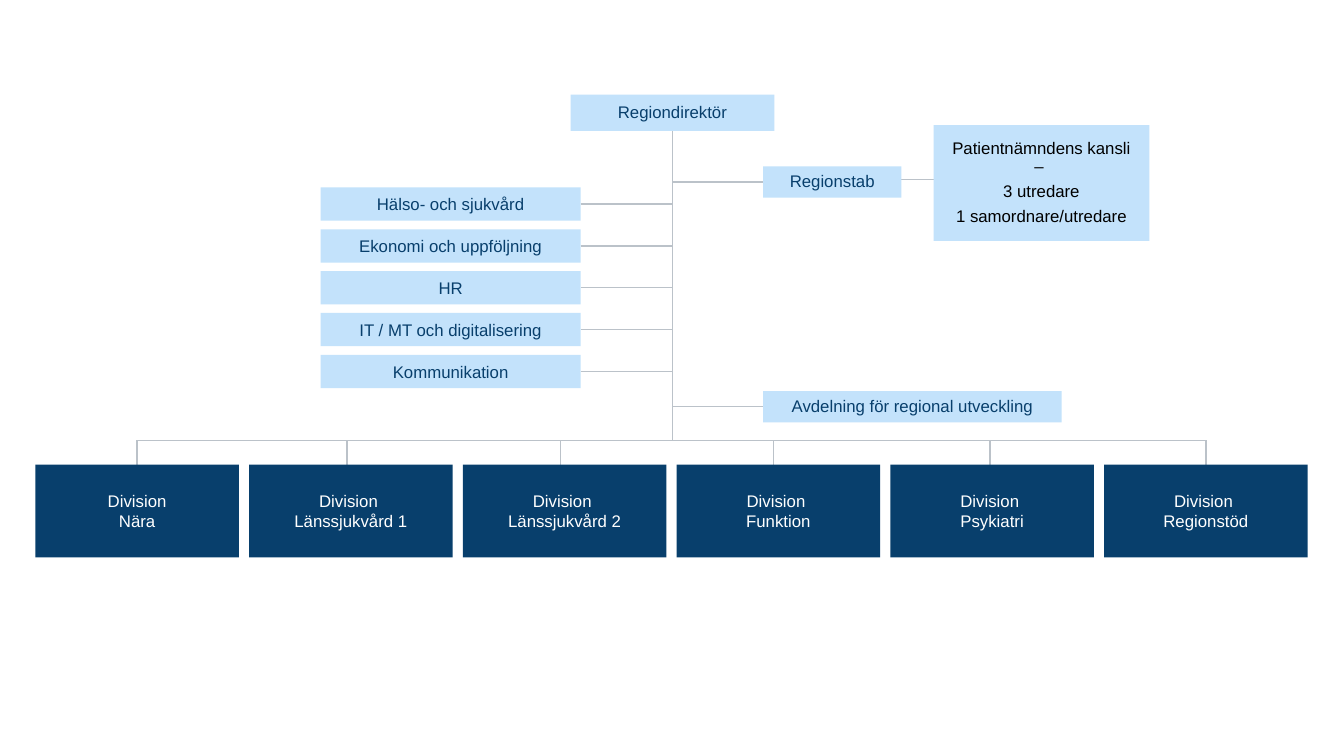
from pptx import Presentation, util as u
from pptx.dml.color import RGBColor
from pptx.enum import shapes, text
from pptx.oxml.ns import qn
from lxml import etree

NAVY = RGBColor(0x08, 0x3F, 0x6C)
SKY = RGBColor(0xC3, 0xE2, 0xFB)
GREY = RGBColor(0xBB, 0xC2, 0xC9)
WHITE = RGBColor(0xFF, 0xFF, 0xFF)
BLACK = RGBColor(0, 0, 0)

deck = Presentation()
deck.slide_width, deck.slide_height = u.Inches(13.33), u.Inches(7.5)
page = deck.slides.add_slide(deck.slide_layouts[6])


def add_box(wording, left, top, width, height, fill=SKY, color=NAVY,
            inset=0.15, line_spacing=None, space_after=None):
    box = page.shapes.add_shape(shapes.MSO_SHAPE.RECTANGLE,
                                *map(u.Inches, (left, top, width, height)))
    box.shadow.inherit = False
    box.fill.solid()
    box.fill.fore_color.rgb = fill
    box.line.fill.background()
    frame = box.text_frame
    frame.word_wrap = True
    frame.vertical_anchor = text.MSO_ANCHOR.MIDDLE
    frame.margin_left = frame.margin_right = u.Inches(inset)
    frame.margin_top = frame.margin_bottom = u.Inches(min(inset, height / 2))
    frame.text = wording
    for para in frame.paragraphs:
        para.alignment = text.PP_ALIGN.CENTER
        para.line_spacing = line_spacing
        para.space_after = space_after
        for span in para.runs:
            span.font.name = "Arial"
            span.font.size = u.Pt(12)
            span.font.color.rgb = color


def add_line(x1, y1, x2, y2):
    line = page.shapes.add_connector(shapes.MSO_CONNECTOR.STRAIGHT,
                                     *map(u.Inches, (x1, y1, x2, y2)))
    line.line.color.rgb = GREY
    line.line.width = u.Pt(1)
    etree.SubElement(line._element.spPr, qn("a:effectLst"))


TRUNK = 6.67
BRANCH = 0.9
SPACED = {"line_spacing": 0.9, "space_after": u.Pt(4.7)}

add_line(8.78, 1.78, 9.69, 1.78)
add_box("Regiondirektör", 5.66, 0.94, 2.02, 0.36, **SPACED)

RAIL = 4.37
add_line(TRUNK, 1.3, TRUNK, RAIL)

STAFF = ["Hälso- och sjukvård", "Ekonomi och uppföljning", "HR",
         "IT / MT och digitalisering", "Kommunikation"]
STAFF_LEFT, STAFF_TOP, STAFF_PITCH = 3.18, 1.86, 0.415
STAFF_WIDTH, STAFF_HEIGHT = 2.58, 0.33
for row, unit in enumerate(STAFF):
    top = STAFF_TOP + row * STAFF_PITCH
    middle = top + STAFF_HEIGHT / 2
    add_box(unit, STAFF_LEFT, top, STAFF_WIDTH, STAFF_HEIGHT)
    add_line(STAFF_LEFT + STAFF_WIDTH, middle, TRUNK, middle)

SIDE_HEIGHT = 0.31
for unit, top, width in [("Regionstab", 1.65, 1.37),
                         ("Avdelning för regional utveckling", 3.88, 2.96)]:
    middle = top + SIDE_HEIGHT / 2
    add_line(TRUNK, middle, TRUNK + BRANCH, middle)
    add_box(unit, TRUNK + BRANCH, top, width, SIDE_HEIGHT, **SPACED)

add_box("Patientnämndens kansli – \n 3 utredare \n1 samordnare/utredare",
        9.26, 1.24, 2.14, 1.15, color=BLACK, **SPACED)

DIVISIONS = [("Division\vNära", 1.36), ("Division \vLänssjukvård 1", 3.44),
             ("Division \vLänssjukvård 2", 5.56), ("Division \vFunktion", 7.67),
             ("Division \vPsykiatri", 9.82), ("Division \vRegionstöd", 11.96)]
DIVISION_LEFT, DIVISION_TOP, DIVISION_PITCH = 0.35, 4.61, 2.12
add_line(DIVISIONS[0][1], RAIL, DIVISIONS[-1][1], RAIL)
for column, (division, drop) in enumerate(DIVISIONS):
    add_line(drop, RAIL, drop, DIVISION_TOP)
    add_box(division, DIVISION_LEFT + column * DIVISION_PITCH, DIVISION_TOP,
            2.02, 0.92, fill=NAVY, color=WHITE, inset=0.1)

deck.save("out.pptx")
